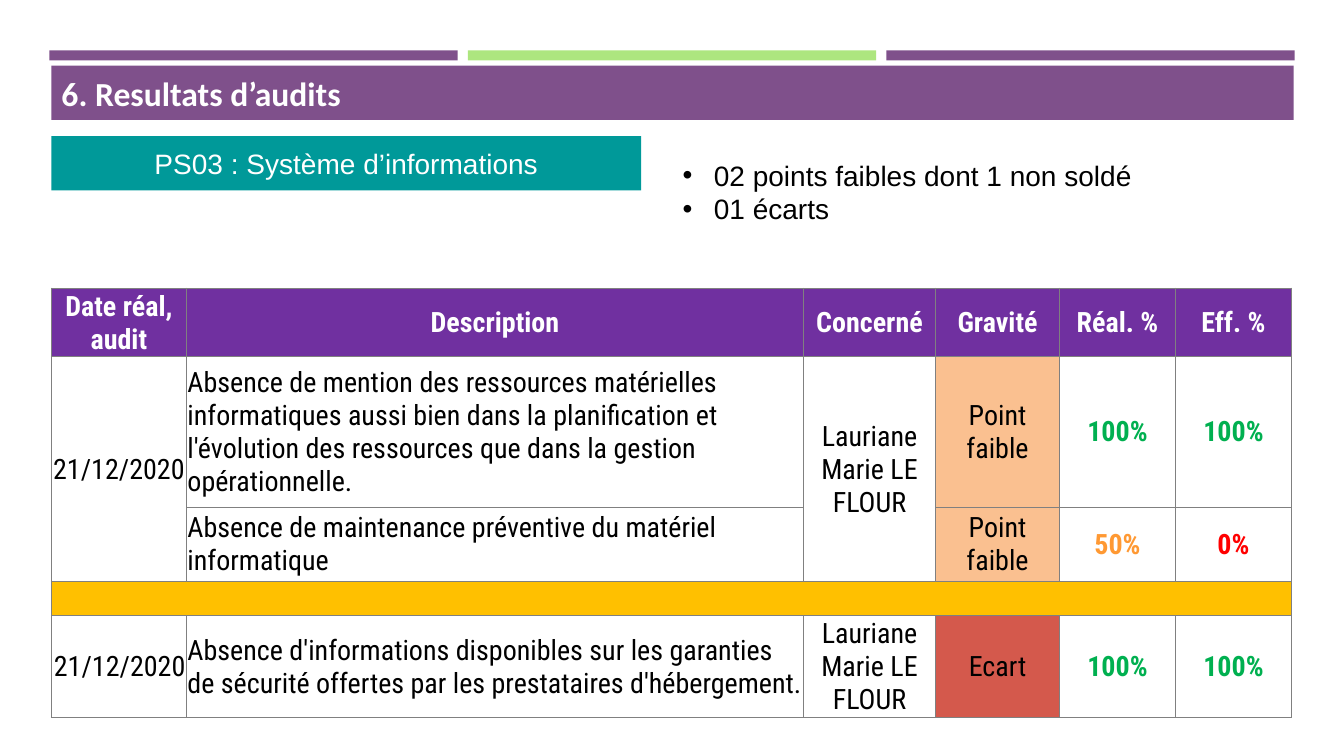
from dataclasses import dataclass

from lxml.etree import SubElement
from pptx import Presentation
from pptx.dml.color import RGBColor
from pptx.enum.shapes import MSO_SHAPE as Shape
from pptx.enum.text import MSO_ANCHOR as Anchor, MSO_AUTO_SIZE as AutoSize, PP_ALIGN as Align
from pptx.oxml.ns import qn
from pptx.util import Pt


@dataclass(frozen=True)
class Theme:
    purple: str = "7F508B"
    green: str = "ADE67F"
    teal: str = "009999"
    header: str = "7030A0"
    band: str = "FFC000"
    weak: str = "FAC090"
    gap: str = "D4594C"
    border: str = "808080"
    white: str = "FFFFFF"
    black: str = "000000"
    done: str = "00B050"
    partial: str = "FF9933"
    undone: str = "FF0000"
    title_font: str = "Calibri"
    text_font: str = "Arial"
    table_font: str = "Roboto Condensed"
    title_size: int = 24
    text_size: int = 20


THEME = Theme()
EMU_PER_PX = 9144  # 100 px to the inch

COLUMNS = (134, 612, 131, 123, 115, 115)
ROWS = (68, 149, 74, 34, 101)
BAND_ROW = 3
MERGES = (((1, 0), (2, 0)), ((1, 2), (2, 2)), ((BAND_ROW, 0), (BAND_ROW, 5)))
RATE_COLOURS = {"100%": THEME.done, "50%": THEME.partial, "0%": THEME.undone}
FILLS = {"Point faible": THEME.weak, "Ecart": THEME.gap}
OWNER = "Lauriane Marie LE FLOUR"
AUDITS = (
    ("Date réal, audit", "Description", "Concerné", "Gravité", "Réal. %", "Eff. %"),
    ("21/12/2020",
     "Absence de mention des ressources matérielles informatiques aussi bien dans la "
     "planification et l'évolution des ressources que dans la gestion opérationnelle.",
     OWNER, "Point faible", "100%", "100%"),
    ("", "Absence de maintenance préventive du matériel informatique",
     "", "Point faible", "50%", "0%"),
    ("",) * len(COLUMNS),
    ("21/12/2020",
     "Absence d'informations disponibles sur les garanties de sécurité offertes par "
     "les prestataires d'hébergement.",
     OWNER, "Ecart", "100%", "100%"),
)


def px(length):
    return length * EMU_PER_PX


def place(item, box):
    item.left, item.top, item.width, item.height = map(px, box)


def paint(item, colour):
    item.fill.solid()
    item.fill.fore_color.rgb = RGBColor.from_string(colour)


def style(para, font, size, colour, bold=False, align=Align.LEFT):
    para.alignment = align
    para.font.name = font
    para.font.size = Pt(size)
    para.font.bold = bold
    para.font.color.rgb = RGBColor.from_string(colour)


def add_bar(page, box, colour):
    bar = page.shapes.add_shape(Shape.RECTANGLE, *map(px, box))
    paint(bar, colour)
    bar.line.fill.background()
    bar.shadow.inherit = False
    return bar


def add_stripes(page, box):
    """Three equal stripes across the box."""
    left, top, width, height = box
    gap = 10
    stripe = (width - 2 * gap) // 3
    for index, colour in enumerate((THEME.purple, THEME.green, THEME.purple)):
        add_bar(page, (left + index * (stripe + gap), top, stripe, height), colour)


def fill_title(page, box, text):
    title = page.shapes.title
    place(title, box)
    paint(title, THEME.purple)
    frame = title.text_frame
    frame.text = text
    frame.auto_size = AutoSize.NONE
    frame.vertical_anchor = Anchor.MIDDLE
    style(frame.paragraphs[0], THEME.title_font, THEME.title_size, THEME.white, bold=True)


def add_process_label(page, box, text):
    frame = add_bar(page, box, THEME.teal).text_frame
    frame.text = text
    frame.vertical_anchor = Anchor.MIDDLE
    style(frame.paragraphs[0], THEME.text_font, THEME.text_size, THEME.white,
          align=Align.CENTER)


def fill_summary(page, box, lines):
    body = page.placeholders[1]
    place(body, box)
    frame = body.text_frame
    frame.text = "\n".join(lines)
    frame.auto_size = AutoSize.NONE
    frame.vertical_anchor = Anchor.TOP
    for para in frame.paragraphs:
        props = para._p.get_or_add_pPr()
        props.set("marL", str(px(31)))
        props.set("indent", str(px(-31)))
        SubElement(props, qn("a:buFont"), typeface="Arial")
        SubElement(props, qn("a:buChar"), char="•")
        para.space_before = Pt(0)
        style(para, THEME.text_font, THEME.text_size, THEME.black)


def add_borders(cell, row, column):
    """Thin lines inside the grid, thicker ones around it."""
    outer = {"lnL": column == 0, "lnR": column == len(COLUMNS) - 1,
             "lnT": row == 0, "lnB": row == len(ROWS) - 1}
    props = cell._tc.get_or_add_tcPr()
    for side, is_outer in outer.items():
        line = SubElement(props, qn(f"a:{side}"), w=str(Pt(1 if is_outer else 0.5)))
        solid = SubElement(line, qn("a:solidFill"))
        SubElement(solid, qn("a:srgbClr"), val=THEME.border)


def format_cell(cell, row, column, text):
    cell.text = text
    cell.vertical_anchor = Anchor.MIDDLE
    cell.margin_left = cell.margin_right = cell.margin_top = px(1)
    cell.margin_bottom = 0
    add_borders(cell, row, column)

    is_header = row == 0
    fill = THEME.header if is_header else THEME.band if row == BAND_ROW else FILLS.get(text)
    if fill:
        paint(cell, fill)
    else:
        cell.fill.background()

    colour = THEME.white if is_header else RATE_COLOURS.get(text, THEME.black)
    align = Align.CENTER
    if column == 1 and not is_header:
        align = Align.LEFT
    elif column == 0 and row == len(ROWS) - 1:
        align = Align.RIGHT
    style(cell.text_frame.paragraphs[0], THEME.table_font, THEME.text_size, colour,
          bold=is_header or text in RATE_COLOURS, align=align)


def add_audit_table(page, left, top):
    box = (left, top, sum(COLUMNS), sum(ROWS))
    table = page.shapes.add_table(len(ROWS), len(COLUMNS), *map(px, box)).table
    table.first_row = table.horz_banding = False
    for column, width in zip(table.columns, COLUMNS):
        column.width = px(width)
    for row, height in zip(table.rows, ROWS):
        row.height = px(height)
    for row, texts in enumerate(AUDITS):
        for column, text in enumerate(texts):
            format_cell(table.cell(row, column), row, column, text)
    for first, last in MERGES:
        table.cell(*first).merge(table.cell(*last))


def build_audit_slide(deck):
    page = deck.slides.add_slide(deck.slide_layouts[1])
    left = 51
    add_stripes(page, (49, 50, 1235, 10))
    fill_title(page, (left, 65, 1232, 54), "6. Resultats d’audits")
    add_process_label(page, (left, 135, 585, 54), "PS03 : Système d’informations")
    fill_summary(page, (667, 152, 492, 77),
                 ("02 points faibles dont 1 non soldé", "01 écarts"))
    add_audit_table(page, left, 286)


def main():
    deck = Presentation()
    deck.slide_width, deck.slide_height = px(1333), px(750)
    build_audit_slide(deck)
    deck.save("out.pptx")


if __name__ == "__main__":
    main()
